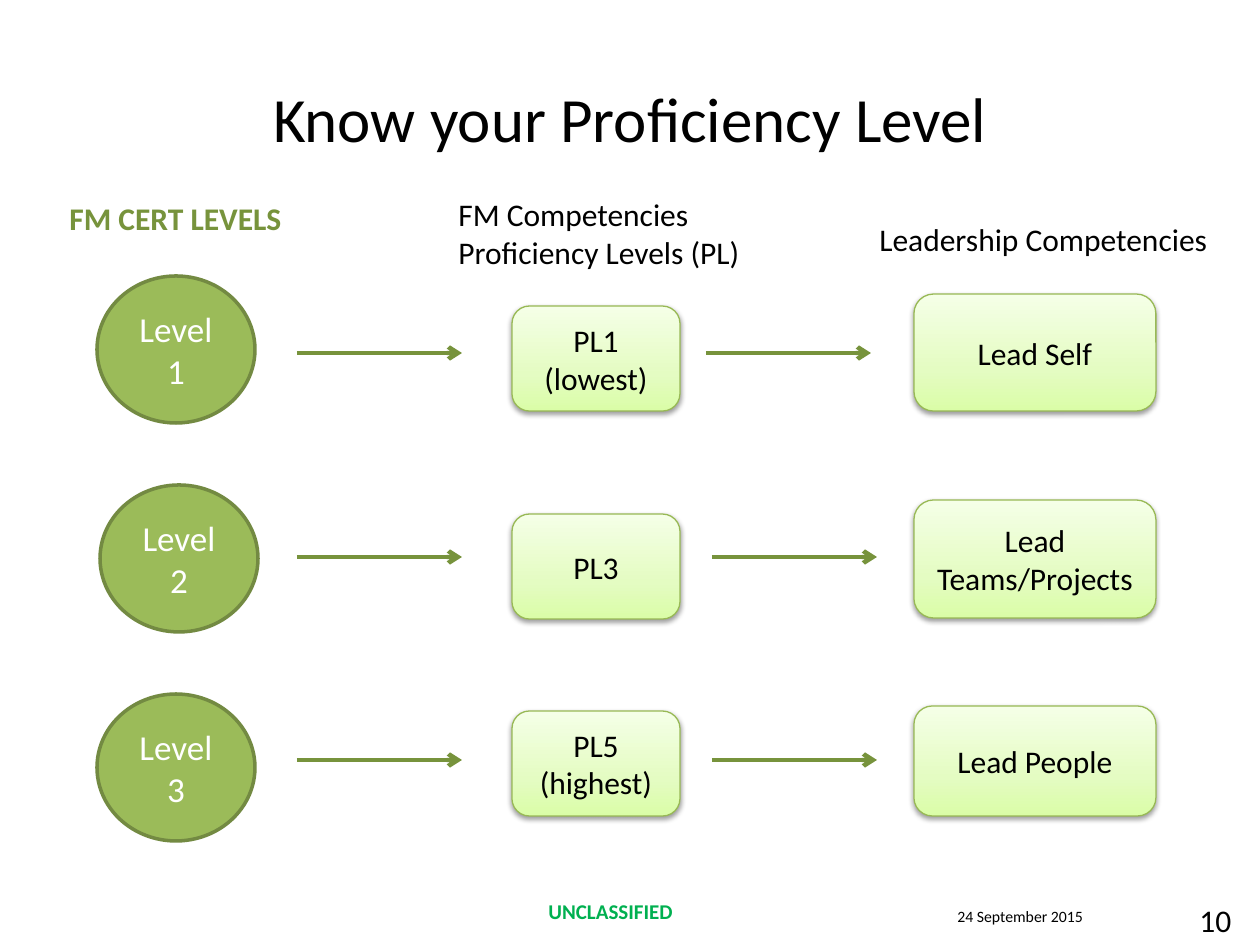
"""Build the slide that maps certification levels to competencies."""
from dataclasses import dataclass

from lxml import etree
from pptx import Presentation
from pptx.dml.color import RGBColor
from pptx.enum.shapes import MSO_CONNECTOR, MSO_SHAPE
from pptx.enum.text import MSO_ANCHOR, PP_ALIGN
from pptx.oxml import parse_xml
from pptx.oxml.ns import nsdecls, qn
from pptx.shapes.autoshape import Shape
from pptx.slide import Slide
from pptx.util import Emu, Pt

PX_PER_INCH = 126
EMU_PER_INCH = 914400
ELLIPSE = MSO_SHAPE.OVAL
ROUNDED = MSO_SHAPE.ROUNDED_RECTANGLE
STRAIGHT = MSO_CONNECTOR.STRAIGHT
MIDDLE = MSO_ANCHOR.MIDDLE
TOP = MSO_ANCHOR.TOP
CENTER = PP_ALIGN.CENTER
LEFT = PP_ALIGN.LEFT


@dataclass(frozen=True)
class Theme:
    font: str = "Calibri"
    black: str = "000000"
    white: str = "FFFFFF"
    circle: str = "9BBB59"
    circle_line: str = "738A42"
    card_line: str = "98B955"
    accent: str = "77933C"
    marking: str = "00B050"
    card_stops: tuple[tuple[int, str], ...] = (
        (0, "DAFDA7"), (35, "E4FCC2"), (100, "F5FFE7"))
    title_size: int = 36
    level_size: int = 20
    body_size: int = 18
    marking_size: int = 12
    date_size: int = 9


THEME = Theme()


@dataclass(frozen=True)
class Box:
    left: int
    top: int
    width: int
    height: int

    def emu(self) -> tuple[Emu, Emu, Emu, Emu]:
        return px(self.left), px(self.top), px(self.width), px(self.height)


@dataclass(frozen=True)
class Label:
    box: Box
    text: str
    size: int = THEME.body_size
    color: str = THEME.black
    bold: bool = False


@dataclass(frozen=True)
class Row:
    level: str
    circle_left: int
    proficiency: str
    proficiency_top: int
    leadership: str
    leadership_top: int
    leadership_height: int
    arrow_y: int
    second_arrow_left: int


LABELS = (
    Label(Box(536, 892, 158, 50), "UNCLASSIFIED", THEME.marking_size, THEME.marking, True),
    Label(Box(1187, 895, 73, 50), "10"),
    Label(Box(945, 901, 220, 34), "24 September 2015", THEME.date_size),
    Label(Box(446, 189, 315, 89), "FM Competencies\nProficiency Levels (PL)"),
    Label(Box(57, 193, 242, 50), "FM CERT LEVELS", color=THEME.accent, bold=True),
    Label(Box(867, 214, 378, 50), "Leadership Competencies"),
)
ROWS = (
    Row("Level 1", 97, "PL1\n(lowest)", 306, "Lead Self", 294, 117, 353, 706),
    Row("Level 2", 100, "PL3", 514, "Lead Teams/Projects", 500, 118, 557, 712),
    Row("Level 3", 97, "PL5\n(highest)", 711, "Lead People", 706, 110, 760, 712),
)
CIRCLE_TOP = 276
CIRCLE_PITCH = 209
FIRST_ARROW_LEFT = 297
ARROW_LENGTH = 165


def px(length: int) -> Emu:
    return Emu(round(length * EMU_PER_INCH / PX_PER_INCH))


def write_text(shape: Shape, text: str, size: int, color: str, align: PP_ALIGN,
               anchor: MSO_ANCHOR, bold: bool = False) -> None:
    frame = shape.text_frame
    frame.text = text
    frame.word_wrap = True
    frame.vertical_anchor = anchor
    for paragraph in frame.paragraphs:
        paragraph.alignment = align
        paragraph.font.name = THEME.font
        paragraph.font.size = Pt(size)
        paragraph.font.bold = bold
        paragraph.font.color.rgb = RGBColor.from_string(color)


def add_title(slide: Slide, box: Box, text: str) -> None:
    title = slide.shapes.title
    title.left, title.top, title.width, title.height = box.emu()
    write_text(title, text, THEME.title_size, THEME.black, CENTER, MIDDLE)


def add_label(slide: Slide, label: Label) -> None:
    shape = slide.shapes.add_textbox(*label.box.emu())
    write_text(shape, label.text, label.size, label.color, LEFT, TOP, label.bold)


def add_outlined(slide: Slide, preset: MSO_SHAPE, box: Box, line: str, width: float) -> Shape:
    shape = slide.shapes.add_shape(preset, *box.emu())
    shape.line.color.rgb = RGBColor.from_string(line)
    shape.line.width = Pt(width)
    shape.shadow.inherit = False
    return shape


def add_circle(slide: Slide, box: Box, text: str) -> None:
    shape = add_outlined(slide, ELLIPSE, box, THEME.circle_line, 2)
    shape.fill.solid()
    shape.fill.fore_color.rgb = RGBColor.from_string(THEME.circle)
    write_text(shape, text, THEME.level_size, THEME.white, CENTER, MIDDLE)


def add_card(slide: Slide, box: Box, text: str) -> None:
    shape = add_outlined(slide, ROUNDED, box, THEME.card_line, 0.75)
    properties = shape.element.spPr
    stops = "".join(f'<a:gs pos="{position * 1000}"><a:srgbClr val="{color}"/></a:gs>'
                    for position, color in THEME.card_stops)
    properties.find(qn("a:prstGeom")).addnext(parse_xml(
        f'<a:gradFill {nsdecls("a")} rotWithShape="1"><a:gsLst>{stops}</a:gsLst>'
        '<a:lin ang="16200000" scaled="0"/></a:gradFill>'))
    properties.find(qn("a:effectLst")).append(parse_xml(
        f'<a:outerShdw {nsdecls("a")} blurRad="{Pt(3.1)}" dist="{Pt(1.6)}" dir="5400000" '
        f'rotWithShape="0"><a:srgbClr val="{THEME.black}"><a:alpha val="38000"/>'
        '</a:srgbClr></a:outerShdw>'))
    write_text(shape, text, THEME.body_size, THEME.black, CENTER, MIDDLE)


def add_arrow(slide: Slide, left: int, y: int) -> None:
    arrow = slide.shapes.add_connector(
        STRAIGHT, px(left), px(y), px(left + ARROW_LENGTH), px(y))
    arrow.line.color.rgb = RGBColor.from_string(THEME.accent)
    arrow.line.width = Pt(2.5)
    etree.SubElement(arrow.line._get_or_add_ln(), qn("a:tailEnd"), type="arrow")
    etree.SubElement(arrow._element.spPr, qn("a:effectLst"))


def add_row(slide: Slide, index: int, row: Row) -> None:
    circle_top = CIRCLE_TOP + index * CIRCLE_PITCH
    add_circle(slide, Box(row.circle_left, circle_top, 158, 147), row.level)
    add_card(slide, Box(512, row.proficiency_top, 168, 105), row.proficiency)
    add_card(slide, Box(914, row.leadership_top, 242, row.leadership_height), row.leadership)
    for left in (FIRST_ARROW_LEFT, row.second_arrow_left):
        add_arrow(slide, left, row.arrow_y)


def main() -> None:
    presentation = Presentation()
    presentation.slide_width = px(1260)
    presentation.slide_height = px(945)
    slide = presentation.slides.add_slide(presentation.slide_layouts.get_by_name("Title Only"))
    add_title(slide, Box(63, 38, 1134, 158), "Know your Proficiency Level")
    for label in LABELS:
        add_label(slide, label)
    for index, row in enumerate(ROWS):
        add_row(slide, index, row)
    presentation.save("out.pptx")


if __name__ == "__main__":
    main()
